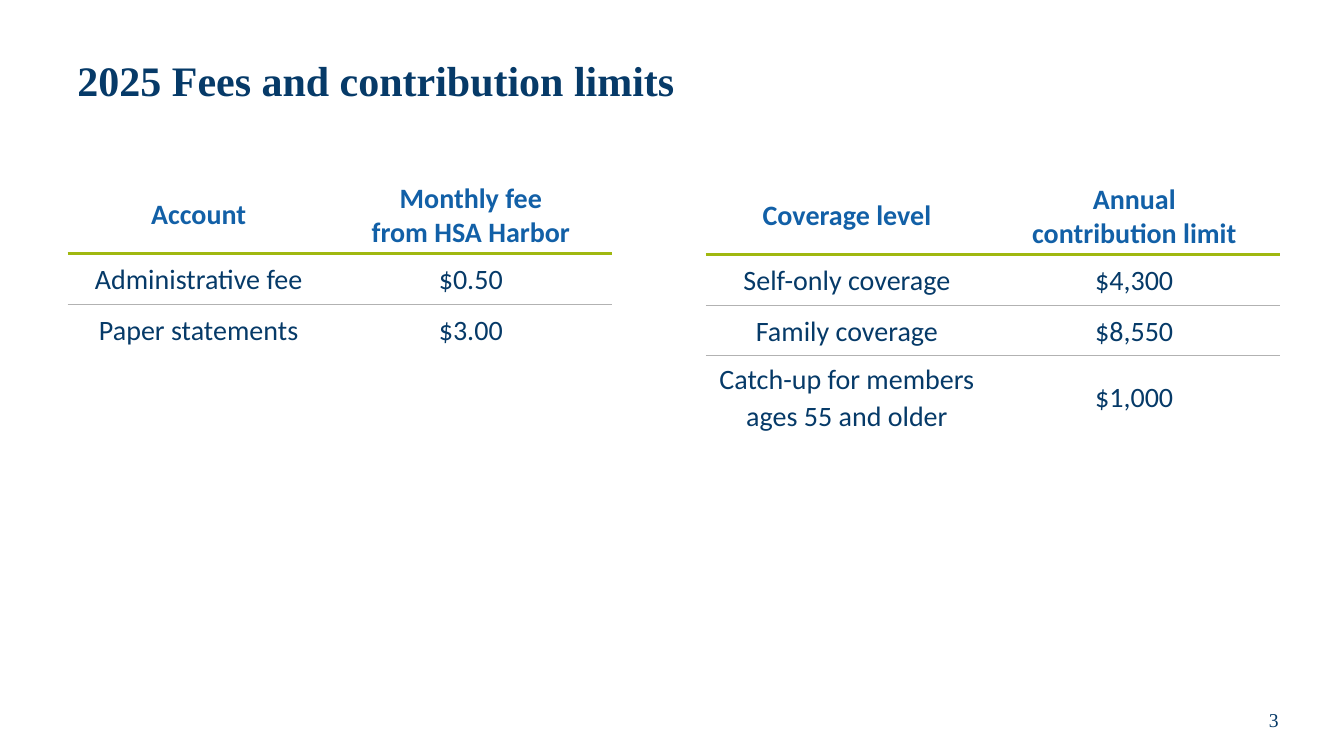
"""Builds the slide on 2025 fees and contribution limits."""
import pptx
import pptx.dml.color
import pptx.enum.text
import pptx.oxml
import pptx.oxml.ns
import pptx.util

TITLE = "2025 Fees and contribution limits"
PAGE_NUMBER = "3"
TABLES = [
    {
        "left": 67, "top": 175, "columns": [260, 280],
        "rows": [
            ("Account", "Monthly fee\nfrom HSA Harbor"),
            ("Administrative fee", "$0.50"),
            ("Paper statements", "$3.00"),
        ],
    },
    {
        "left": 700, "top": 176, "columns": [280, 290],
        "rows": [
            ("Coverage level", "Annual\ncontribution limit"),
            ("Self-only coverage", "$4,300"),
            ("Family coverage", "$8,550"),
            ("Catch-up for members ages 55 and older", "$1,000"),
        ],
    },
]
NAVY, BLUE, GREEN, GRAY = "063A68", "1260A7", "A0B810", "B2B2B2"
SERIF, SANS = "Times New Roman", "Calibri"
HEADER_RULE, ROW_RULE = (GREEN, 2.25), (GRAY, 0.5)
ROW_HEIGHT = 50
PLAIN_TABLE_STYLE = "{2D5ABB26-0587-4C30-8999-92F81FD0307C}"
LEFT, CENTER = pptx.enum.text.PP_ALIGN.LEFT, pptx.enum.text.PP_ALIGN.CENTER
MIDDLE = pptx.enum.text.MSO_ANCHOR.MIDDLE


def px(length):
    return pptx.util.Emu(length * 9144)


def color(value):
    return pptx.dml.color.RGBColor.from_string(value)


def write(para, text, font, size, tint, bold=False, align=CENTER, spacing=1.0):
    para.text = text
    para.alignment = align
    para.line_spacing = spacing
    for span in para.runs:
        span.font.name = font
        span.font.size = pptx.util.Pt(size)
        span.font.bold = bold
        span.font.color.rgb = color(tint)


def add_text(page, place, text, **style):
    box = page.shapes.add_textbox(*map(px, place))
    box.text_frame.word_wrap = True
    box.text_frame.vertical_anchor = MIDDLE
    write(box.text_frame.paragraphs[0], text, SERIF, tint=NAVY, **style)


def add_border(cell, side, rule):
    tint, width = rule
    cell._tc.get_or_add_tcPr().append(pptx.oxml.parse_xml(
        f'<a:{side} {pptx.oxml.ns.nsdecls("a")} w="{pptx.util.Pt(width)}">'
        f'<a:solidFill><a:srgbClr val="{tint}"/></a:solidFill></a:{side}>'))


def add_table(page, content):
    rows, columns = content["rows"], content["columns"]
    place = (content["left"], content["top"], sum(columns), ROW_HEIGHT * len(rows))
    table = page.shapes.add_table(len(rows), len(columns), *map(px, place)).table
    table.first_row = table.horz_banding = False
    table._tbl.tblPr.find(pptx.oxml.ns.qn("a:tableStyleId")).text = PLAIN_TABLE_STYLE
    for column, width in zip(table.columns, columns):
        column.width = px(width)
    rules = [HEADER_RULE] + [ROW_RULE] * (len(rows) - 2)
    for r, row in enumerate(rows):
        for c, text in enumerate(row):
            cell = table.cell(r, c)
            cell.vertical_anchor = MIDDLE
            if r > 0:
                add_border(cell, "lnT", rules[r - 1])
            if r < len(rules):
                add_border(cell, "lnB", rules[r])
            cell.fill.background()
            header = r == 0
            write(cell.text_frame.paragraphs[0], text, SANS, 20,
                  BLUE if header else NAVY, bold=header,
                  spacing=1.0 if header else 1.07)


def main():
    deck = pptx.Presentation()
    deck.slide_width, deck.slide_height = px(1333), px(750)
    page = deck.slides.add_slide(deck.slide_layouts[6])
    add_text(page, (67, 25, 1200, 115), TITLE,
             size=30, bold=True, align=LEFT, spacing=0.9)
    for content in TABLES:
        add_table(page, content)
    add_text(page, (1205, 689, 117, 50), PAGE_NUMBER, size=14)
    deck.save("out.pptx")


if __name__ == "__main__":
    main()
